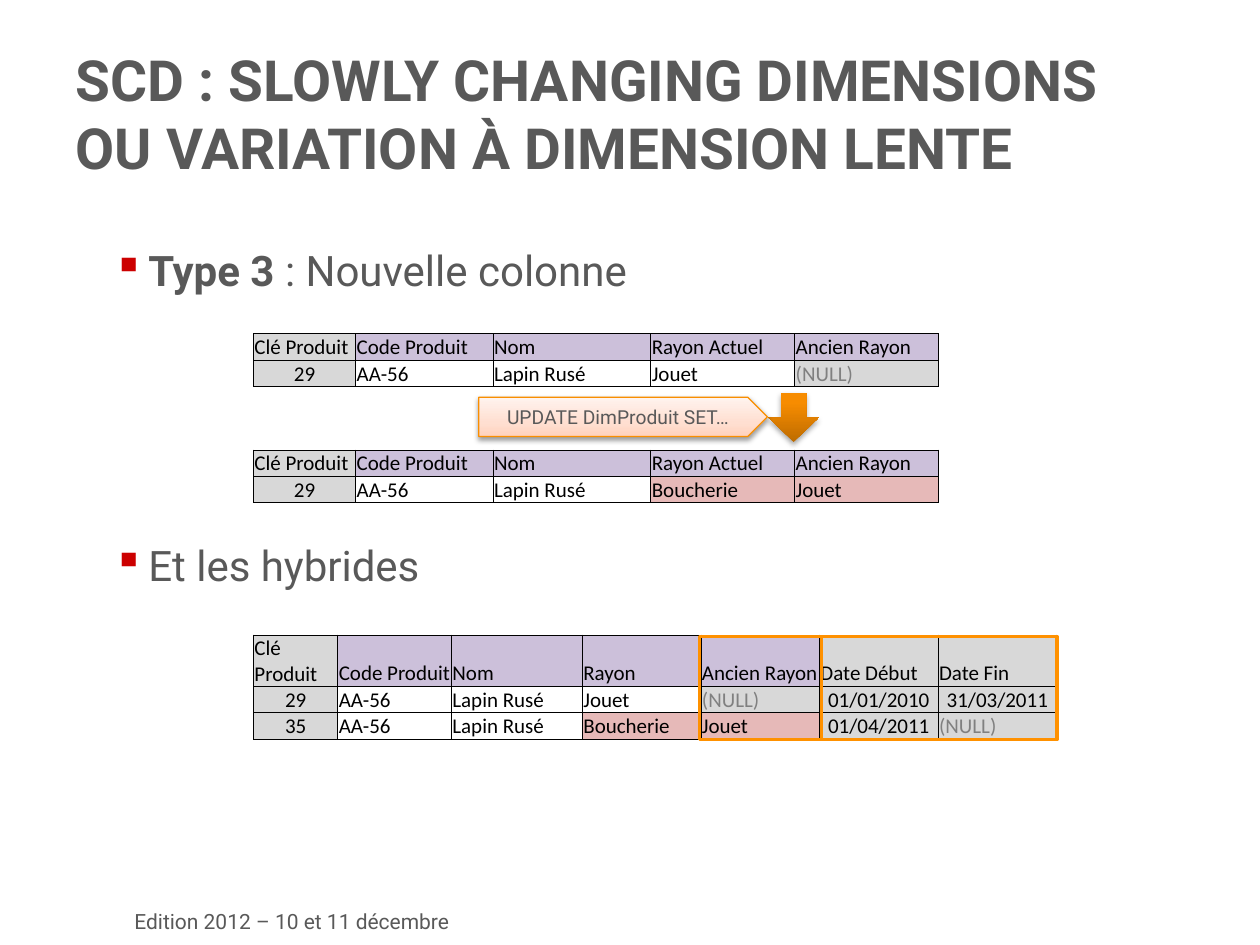
from lxml.etree import SubElement
from pptx import Presentation
from pptx.dml.color import RGBColor
from pptx.enum.shapes import MSO_SHAPE
from pptx.enum.text import MSO_ANCHOR, MSO_AUTO_SIZE, PP_ALIGN
from pptx.oxml.ns import qn
from pptx.util import Cm, Pt

BLACK = RGBColor(0x00, 0x00, 0x00)
SLATE = RGBColor(0x59, 0x59, 0x59)
FADED = RGBColor(0x80, 0x80, 0x80)
RED = RGBColor(0xCC, 0x00, 0x00)
AMBER = RGBColor(0xFF, 0x91, 0x00)
EDGE = RGBColor(0xF9, 0x8E, 0x00)
GREY = RGBColor(0xD8, 0xD8, 0xD8)
MAUVE = RGBColor(0xCC, 0xC0, 0xDA)
ROSE = RGBColor(0xE6, 0xB9, 0xB8)
ARROW = [(0, RGBColor(0xBE, 0x6C, 0x00)), (80, RGBColor(0xF7, 0x8C, 0x00)),
         (100, RGBColor(0xF8, 0x8D, 0x00))]
PEACH = [(0, RGBColor(0xFF, 0xD2, 0xBD)), (35, RGBColor(0xFF, 0xDF, 0xD1)),
         (100, RGBColor(0xFF, 0xF3, 0xEE))]

TINTS = {"G": GREY, "M": MAUVE, "R": ROSE, "-": None}
LEFT = 5.11
ROW = 0.53
WIDE = [2.06, 2.77, 3.18, 2.9, 2.9]
SLIM = [1.7, 2.29, 2.64, 2.39, 2.39, 2.39, 2.39]
HEAD = ["Clé Produit", "Code Produit", "Nom", "Rayon Actuel", "Ancien Rayon"]
ITEM = ["AA-56", "Lapin Rusé"]
BEFORE = [("GMMMM", HEAD), ("G---G", ["29", *ITEM, "Jouet", "(NULL)"])]
AFTER = [("GMMMM", HEAD), ("G--RR", ["29", *ITEM, "Boucherie", "Jouet"])]
HYBRID = [
    ("GMMMMGG", [*HEAD[:3], "Rayon", "Ancien Rayon", "Date Début", "Date Fin"]),
    ("G---GGG", ["29", *ITEM, "Jouet", "(NULL)", "01/01/2010", "31/03/2011"]),
    ("G--RRGG", ["35", *ITEM, "Boucherie", "Jouet", "01/04/2011", "(NULL)"]),
]


def write(para, text, size=12, font="Roboto", color=SLATE, bold=False, align=None):
    """Add one formatted run to a paragraph."""
    run = para.add_run()
    run.text = text
    run.font.size = Pt(size)
    run.font.name = font
    run.font.bold = bold
    run.font.color.rgb = color
    if align is not None:
        para.alignment = align


def add_title(slide, text):
    title = slide.shapes.title
    title.left, title.top, title.width, title.height = Cm(1.27), Cm(0.78), Cm(22.86), Cm(1.57)
    frame = title.text_frame
    frame.auto_size = MSO_AUTO_SIZE.NONE
    frame.vertical_anchor = MSO_ANCHOR.TOP
    write(frame.paragraphs[0], text, size=32.4, bold=True, align=PP_ALIGN.LEFT)


def add_list(slide, items):
    """Add bulleted items, each a list of (text, bold) runs."""
    box = slide.shapes.add_textbox(Cm(1.27), Cm(4.8), Cm(22.86), Cm(12.4))
    frame = box.text_frame
    frame.word_wrap = True
    for i, runs in enumerate(items):
        para = frame.add_paragraph() if i else frame.paragraphs[0]
        props = para._p.get_or_add_pPr()
        props.set("marL", str(Cm(1.47)))
        props.set("indent", str(-Cm(0.71)))
        if i:
            para.space_before = Pt(140)
        tint = SubElement(props, qn("a:buClr"))
        SubElement(tint, qn("a:srgbClr"), val=str(RED))
        SubElement(props, qn("a:buChar"), char="▪")
        for text, bold in runs:
            write(para, text, size=24, bold=bold)


def add_edge(cell):
    """Draw thin black borders; call before filling the cell."""
    props = cell._tc.get_or_add_tcPr()
    for side in ("lnL", "lnR", "lnT", "lnB"):
        line = SubElement(props, qn(f"a:{side}"), w=str(Pt(0.5)))
        fill = SubElement(line, qn("a:solidFill"))
        SubElement(fill, qn("a:srgbClr"), val=str(BLACK))


def fill_cell(cell, text, tint):
    cell.margin_left = cell.margin_right = cell.margin_top = Cm(0.02)
    cell.margin_bottom = 0
    cell.vertical_anchor = MSO_ANCHOR.BOTTOM
    add_edge(cell)
    if tint is None:
        cell.fill.background()
    else:
        cell.fill.solid()
        cell.fill.fore_color.rgb = tint
    write(cell.text_frame.paragraphs[0], text, font="Calibri",
          color=FADED if text == "(NULL)" else BLACK,
          align=PP_ALIGN.CENTER if text[0].isdigit() else PP_ALIGN.LEFT)


def add_grid(slide, top, widths, rows, head=ROW):
    """Add a table whose rows are (tint codes, texts)."""
    high = head + ROW * (len(rows) - 1)
    table = slide.shapes.add_table(len(rows), len(widths), Cm(LEFT), Cm(top),
                                   Cm(sum(widths)), Cm(high)).table
    table.first_row = table.horz_banding = False
    for col, width in zip(table.columns, widths):
        col.width = Cm(width)
    for r, (codes, texts) in enumerate(rows):
        table.rows[r].height = Cm(ROW if r else head)
        for c, (code, text) in enumerate(zip(codes, texts)):
            fill_cell(table.cell(r, c), text, TINTS[code])


def add_form(slide, kind, left, top, width, height, line=None, weight=1):
    form = slide.shapes.add_shape(kind, Cm(left), Cm(top), Cm(width), Cm(height))
    form.shadow.inherit = False
    form.fill.background()
    if line is None:
        form.line.fill.background()
    else:
        form.line.color.rgb = line
        form.line.width = Pt(weight)
    return form


def add_glow(form, stops, alpha, dist):
    """Give a form an upward gradient and a soft shadow below it."""
    form.fill.gradient()
    form.fill.gradient_angle = 90
    props = form._element.spPr
    ramp = props.find(qn("a:gradFill")).find(qn("a:gsLst"))
    for old in list(ramp):
        ramp.remove(old)
    for place, color in stops:
        stop = SubElement(ramp, qn("a:gs"), pos=str(place * 1000))
        SubElement(stop, qn("a:srgbClr"), val=str(color))
    shade = SubElement(props.find(qn("a:effectLst")), qn("a:outerShdw"),
                       blurRad=str(Pt(3.1)), dist=str(Pt(dist)),
                       dir="5400000", rotWithShape="0")
    color = SubElement(shade, qn("a:srgbClr"), val=str(BLACK))
    SubElement(color, qn("a:alpha"), val=str(alpha * 1000))


def add_update(slide):
    arrow = add_form(slide, MSO_SHAPE.DOWN_ARROW, 15.49, 7.92, 1.02, 0.99)
    add_glow(arrow, ARROW, alpha=35, dist=1.8)
    label = add_form(slide, MSO_SHAPE.PENTAGON, 9.65, 8.01, 5.82, 0.79, EDGE, 0.75)
    add_glow(label, PEACH, alpha=38, dist=1.6)
    frame = label.text_frame
    frame.vertical_anchor = MSO_ANCHOR.MIDDLE
    write(frame.paragraphs[0], "UPDATE DimProduit SET…", size=11, align=PP_ALIGN.CENTER)


def add_foot(slide, text):
    box = slide.shapes.add_textbox(Cm(2.46), Cm(18.19), Cm(7.04), Cm(0.76))
    box.text_frame.word_wrap = False
    box.text_frame.auto_size = MSO_AUTO_SIZE.SHAPE_TO_FIT_TEXT
    write(box.text_frame.paragraphs[0], text)


def main():
    deck = Presentation()
    deck.slide_width, deck.slide_height = Cm(25.4), Cm(19.05)
    slide = deck.slides.add_slide(deck.slide_layouts[5])
    add_foot(slide, "Edition 2012 – 10 et 11 décembre")
    add_list(slide, [[("Type 3 ", True), (": Nouvelle colonne", False)],
                     [("Et les hybrides", False)]])
    add_title(slide, "SCD : SLOWLY CHANGING DIMENSIONS OU VARIATION À DIMENSION LENTE")
    add_grid(slide, 6.73, WIDE, BEFORE)
    add_grid(slide, 9.07, WIDE, AFTER)
    add_update(slide)
    add_grid(slide, 12.8, SLIM, HYBRID, head=1.04)
    for left, width in ((14.1, 2.46), (16.56, 4.75)):
        add_form(slide, MSO_SHAPE.RECTANGLE, left, 12.83, width, 2.08, AMBER, 2)
    deck.save("out.pptx")


if __name__ == "__main__":
    main()
